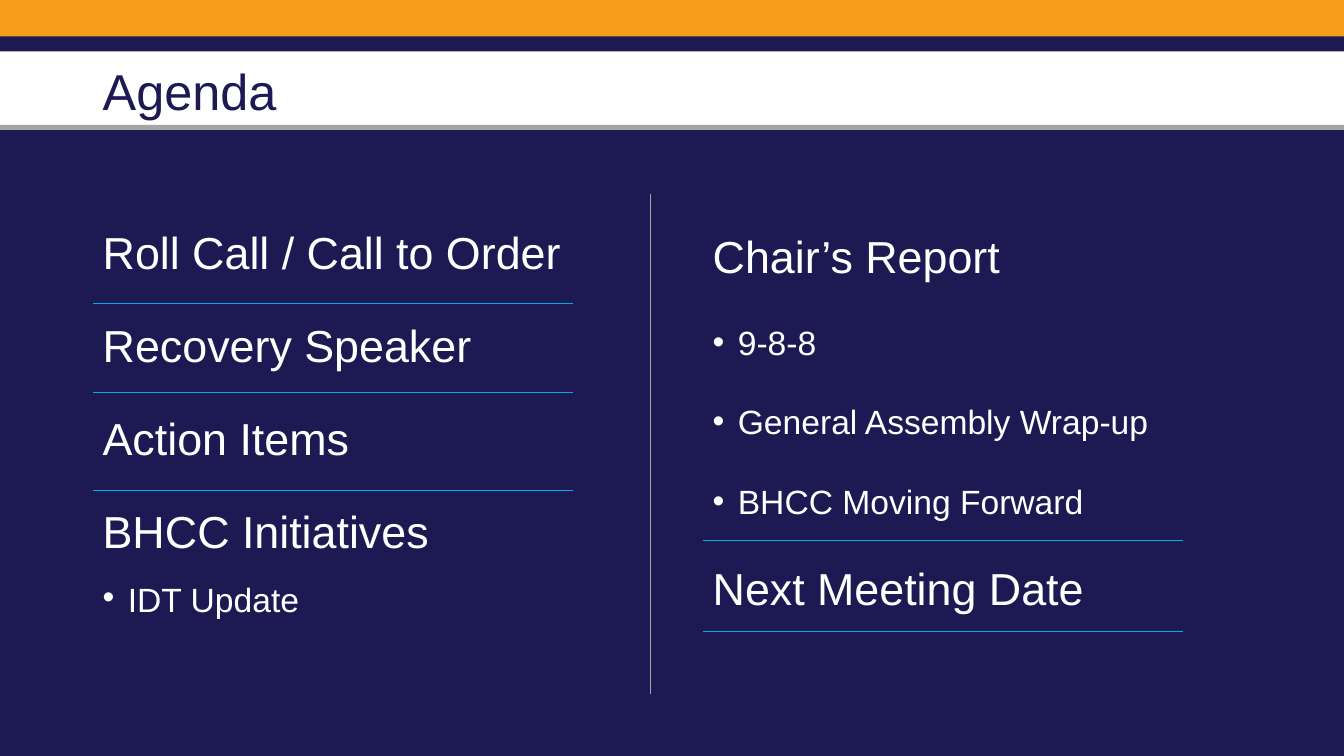
from dataclasses import dataclass

from lxml import etree
from pptx import Presentation
from pptx.dml.color import RGBColor
from pptx.enum.shapes import MSO_CONNECTOR, MSO_SHAPE
from pptx.enum.text import MSO_ANCHOR
from pptx.oxml.ns import qn
from pptx.util import Inches, Pt

RECTANGLE = MSO_SHAPE.RECTANGLE
STRAIGHT = MSO_CONNECTOR.STRAIGHT
MIDDLE = MSO_ANCHOR.MIDDLE
TOP = MSO_ANCHOR.TOP


@dataclass(frozen=True)
class Theme:
    """Colours, font and type sizes of the deck."""
    navy: RGBColor = RGBColor(0x1D, 0x19, 0x53)
    orange: RGBColor = RGBColor(0xF8, 0x9C, 0x1B)
    grey: RGBColor = RGBColor(0xA5, 0xA5, 0xA5)
    blue: RGBColor = RGBColor(0x00, 0xAD, 0xEE)
    white: RGBColor = RGBColor(0xFF, 0xFF, 0xFF)
    font: str = "Arial"
    title_size: int = 36
    topic_size: int = 32
    detail_size: int = 24


THEME = Theme()
WIDTH, HEIGHT = 13.33, 7.5


def add_band(slide, top, height, color):
    """Draw a full-width colour band."""
    band = slide.shapes.add_shape(RECTANGLE, 0, Inches(top), Inches(WIDTH), Inches(height))
    band.shadow.inherit = False
    band.fill.solid()
    band.fill.fore_color.rgb = color
    band.line.fill.background()


def add_rule(slide, start, end, color):
    """Draw a thin straight rule between two points."""
    rule = slide.shapes.add_connector(STRAIGHT, *map(Inches, start + end))
    rule.line.color.rgb = color
    rule.line.width = Pt(0.5)
    etree.SubElement(rule._element.spPr, qn("a:effectLst"))


def add_text_frame(slide, box, anchor):
    """Add a wrapping text box and return its frame."""
    frame = slide.shapes.add_textbox(*map(Inches, box)).text_frame
    frame.word_wrap = True
    frame.vertical_anchor = anchor
    return frame


def style_paragraph(paragraph, size, color):
    """Apply the deck font to every run of a paragraph."""
    for run in paragraph.runs:
        run.font.name = THEME.font
        run.font.size = Pt(size)
        run.font.color.rgb = color


def add_bullet(paragraph):
    """Give a paragraph a hanging round bullet."""
    properties = paragraph._p.get_or_add_pPr()
    properties.set("marL", str(Inches(0.25)))
    properties.set("indent", str(-Inches(0.25)))
    etree.SubElement(properties, qn("a:buFont"), typeface=THEME.font)
    etree.SubElement(properties, qn("a:buChar"), char="•")


def add_header(slide, box):
    """Draw the bands and the slide title inside its box."""
    add_band(slide, 0, 0.4, THEME.orange)
    add_band(slide, 0.36, 0.15, THEME.navy)
    add_band(slide, 1.24, 0.06, THEME.grey)
    add_band(slide, 1.29, HEIGHT - 1.29, THEME.navy)
    title = add_text_frame(slide, box, MIDDLE).paragraphs[0]
    title.text = "Agenda"
    title.line_spacing = 0.9
    style_paragraph(title, THEME.title_size, THEME.navy)


def add_agenda_column(slide, box, items, rule_offsets, detail_spacing=1.0):
    """Write topics and bulleted details, with rules below the topics."""
    left, top = box[:2]
    frame = add_text_frame(slide, box, TOP)
    for index, (item, is_detail) in enumerate(items):
        paragraph = frame.add_paragraph() if index else frame.paragraphs[0]
        paragraph.text = item
        paragraph.space_after = Pt(18)
        if index:
            paragraph.space_before = Pt(10)
        if is_detail:
            paragraph.line_spacing = detail_spacing
            add_bullet(paragraph)
        size = THEME.detail_size if is_detail else THEME.topic_size
        style_paragraph(paragraph, size, THEME.white)
    for offset in rule_offsets:
        add_rule(slide, (left, top + offset), (left + 4.76, top + offset), THEME.blue)


def add_agenda_slide(presentation):
    """Build the two-column agenda slide."""
    slide = presentation.slides.add_slide(presentation.slide_layouts[6])
    add_header(slide, (0.92, 0.21, 11.92, 1.45))
    add_agenda_column(
        slide, (0.92, 2.18, 5.14, 5.3),
        [("Roll Call / Call to Order", False), ("Recovery Speaker", False),
         ("Action Items", False), ("BHCC Initiatives", False), ("IDT Update", True)],
        (0.83, 1.71, 2.68), detail_spacing=0.5)
    add_agenda_column(
        slide, (6.97, 2.22, 5.44, 4.76),
        [("Chair’s Report", False), ("9-8-8", True), ("General Assembly Wrap-up", True),
         ("BHCC Moving Forward", True), ("Next Meeting Date", False)],
        (3.14, 4.04))
    add_rule(slide, (6.45, 1.92), (6.45, 6.89), THEME.grey)


def main():
    """Create and save the presentation."""
    presentation = Presentation()
    presentation.slide_width = Inches(WIDTH)
    presentation.slide_height = Inches(HEIGHT)
    add_agenda_slide(presentation)
    presentation.save("out.pptx")


if __name__ == "__main__":
    main()
